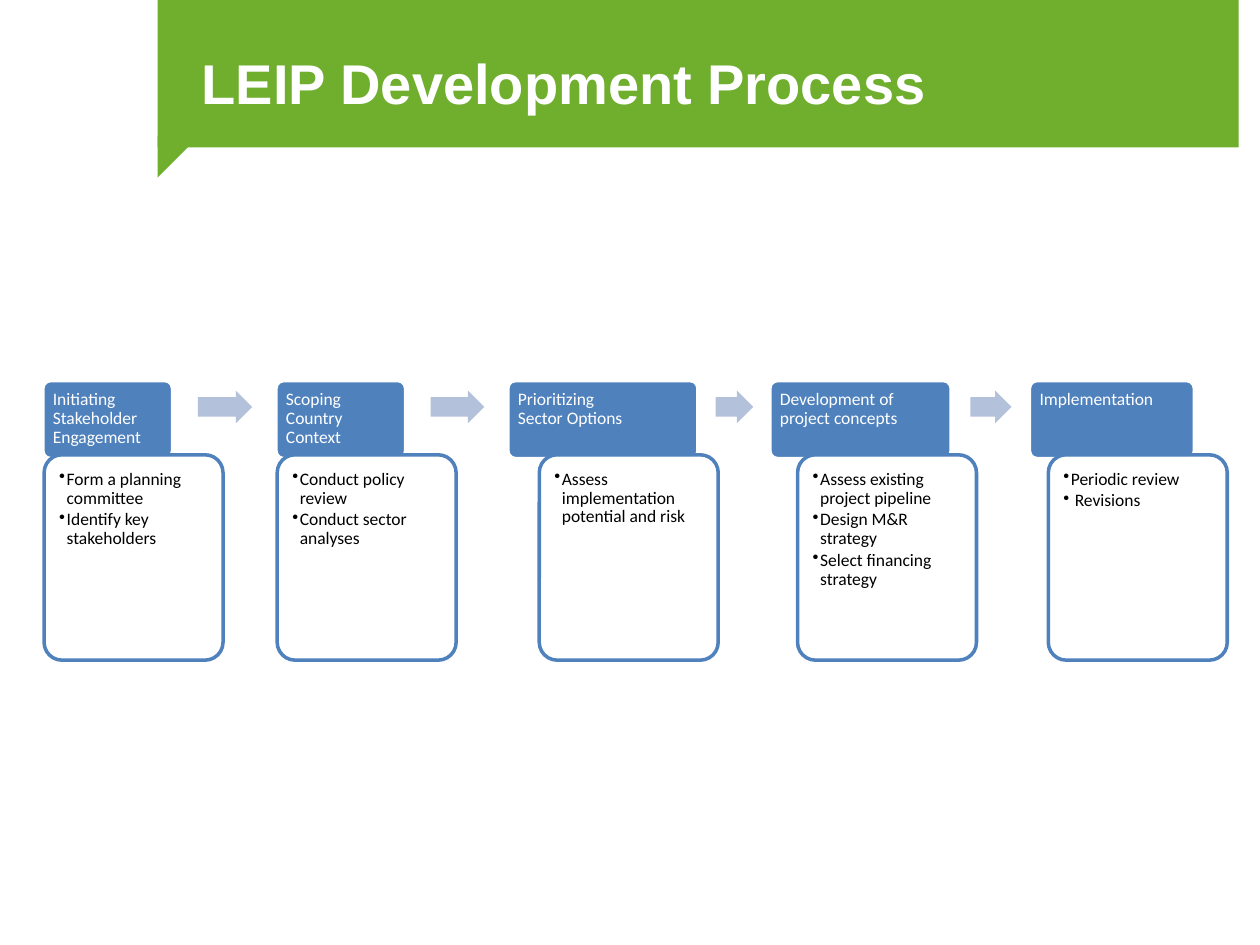
from dataclasses import dataclass
from lxml.etree import SubElement
from pptx import Presentation
from pptx.dml.color import RGBColor as RGB
from pptx.enum.shapes import MSO_SHAPE as Shape
from pptx.enum.text import MSO_ANCHOR as Anchor, MSO_AUTO_SIZE as Fit, PP_ALIGN as Align
from pptx.oxml.ns import qn
from pptx.util import Inches, Pt


@dataclass(frozen=True)
class Theme:
    green: RGB = RGB(0x70, 0xAE, 0x2E)
    blue: RGB = RGB(0x4F, 0x81, 0xBD)
    pale: RGB = RGB(0xB3, 0xC1, 0xDB)
    white: RGB = RGB(0xFF, 0xFF, 0xFF)
    black: RGB = RGB(0, 0, 0)
    head: str = "Arial"
    body: str = "Calibri"
    big: int = 32
    small: int = 10


THEME = Theme()

# Heading, heading left and width, card shift, bullets
STEPS = [
    ("Initiating Stakeholder Engagement", 0.34, 1.03, 0.01,
     ["Form a planning committee", "Identify key stakeholders"]),
    ("Scoping \nCountry Context", 2.19, 1.03, 0.01,
     ["Conduct policy review", "Conduct sector analyses"]),
    ("Prioritizing \nSector Options", 4.03, 1.51, 0.25,
     ["Assess implementation potential and risk"]),
    ("Development of project concepts", 6.11, 1.44, 0.22,
     ["Assess existing project pipeline", "Design M&R strategy",
      "Select financing strategy"]),
    ("Implementation", 8.17, 1.31, 0.15, ["Periodic review", " Revisions"]),
]


def add_form(slide, kind, box, fill, line=None):
    form = slide.shapes.add_shape(kind, *map(Inches, box))
    form.shadow.inherit = False
    form.fill.solid()
    form.fill.fore_color.rgb = fill
    if line is None:
        form.line.fill.background()
    else:
        form.line.color.rgb = line
        form.line.width = Pt(2)
    return form


def add_run(para, text, name, size, color, bold=False):
    run = para.add_run()
    run.text = text
    font = run.font
    font.name, font.size, font.bold = name, Pt(size), bold
    font.color.rgb = color


def add_text(slide, box, lines, color, after, foot, bullet=False):
    frame = slide.shapes.add_textbox(*map(Inches, box)).text_frame
    frame.word_wrap = True
    frame.margin_left = frame.margin_right = frame.margin_top = Inches(0.08)
    frame.margin_bottom = Inches(foot)
    for i, line in enumerate(lines):
        para = frame.add_paragraph() if i else frame.paragraphs[0]
        if bullet:
            para.level = 1
            props = para._p.get_or_add_pPr()
            props.set("marL", str(Inches(0.06)))
            props.set("indent", str(-Inches(0.06)))
            SubElement(props, qn("a:buChar")).set("char", "•")
        para.line_spacing = 0.9
        para.space_after = Pt(after)
        for j, part in enumerate(line.split("\n")):
            if j:
                para.add_line_break()
            add_run(para, part, THEME.body, THEME.small, color)


def add_banner(slide, box, text):
    left, top, wide, high = box
    title = slide.shapes.title
    # Green band with its folded corner, both behind the title
    band = add_form(slide, Shape.RECTANGLE, box, THEME.green)
    fold = add_form(slide, Shape.RIGHT_TRIANGLE,
                    (left, top + high - 0.09, 0.33, 0.33), THEME.green)
    fold.rotation = 90
    for form in (band, fold):
        title._element.addprevious(form._element)
    # Title
    title.left, title.top = Inches(left + 0.25), Inches(top + 0.3)
    title.width, title.height = Inches(8.5), Inches(0.7)
    frame = title.text_frame
    frame.auto_size = Fit.NONE
    frame.vertical_anchor = Anchor.MIDDLE
    para = frame.paragraphs[0]
    para.alignment = Align.LEFT
    add_run(para, text, THEME.head, THEME.big, THEME.white, bold=True)


def add_step(slide, box, shift, head, items):
    left, top, wide, high = box
    # Heading
    tab = add_form(slide, Shape.ROUNDED_RECTANGLE, (left, top, wide, 0.62),
                   THEME.blue, THEME.white)
    tab.adjustments[0] = 0.1
    add_text(slide, (left, top, wide, 0.41), [head], THEME.white, 3.5, 0.04)
    # Card, slightly see-through over the heading
    x, y, w, h = left + shift, top + 0.59, 1.42, high - 0.59
    card = add_form(slide, Shape.ROUNDED_RECTANGLE, (x, y, w, h),
                    THEME.white, THEME.blue)
    card.adjustments[0] = 0.1
    color = card.fill._xPr.find(qn("a:solidFill"))[0]
    SubElement(color, qn("a:alpha")).set("val", "90000")
    add_text(slide, (x + 0.04, y + 0.04, w - 0.08, h - 0.08), items,
             THEME.black, 1.5, 0.08, bullet=True)


def add_flow(slide, top, high):
    for i, (head, left, wide, shift, items) in enumerate(STEPS):
        add_step(slide, (left, top, wide, high), shift, head, items)
        # Arrow in the gap before the next heading
        if i + 1 < len(STEPS):
            end = left + wide
            gap = STEPS[i + 1][1] - end
            arrow = add_form(slide, Shape.RIGHT_ARROW,
                             (end + 0.245 * gap, top + 0.08, 0.525 * gap, 0.26),
                             THEME.pale)
            arrow.adjustments[0] = 0.6
            arrow.adjustments[1] = 0.5


def main():
    deck = Presentation()
    deck.slide_width, deck.slide_height = Inches(10), Inches(7.5)
    slide = deck.slides.add_slide(deck.slide_layouts[5])
    add_banner(slide, (1.25, 0, 8.58, 1.17), "LEIP Development Process")
    add_flow(slide, 3.02, 2.22)
    deck.save("out.pptx")


if __name__ == "__main__":
    main()
